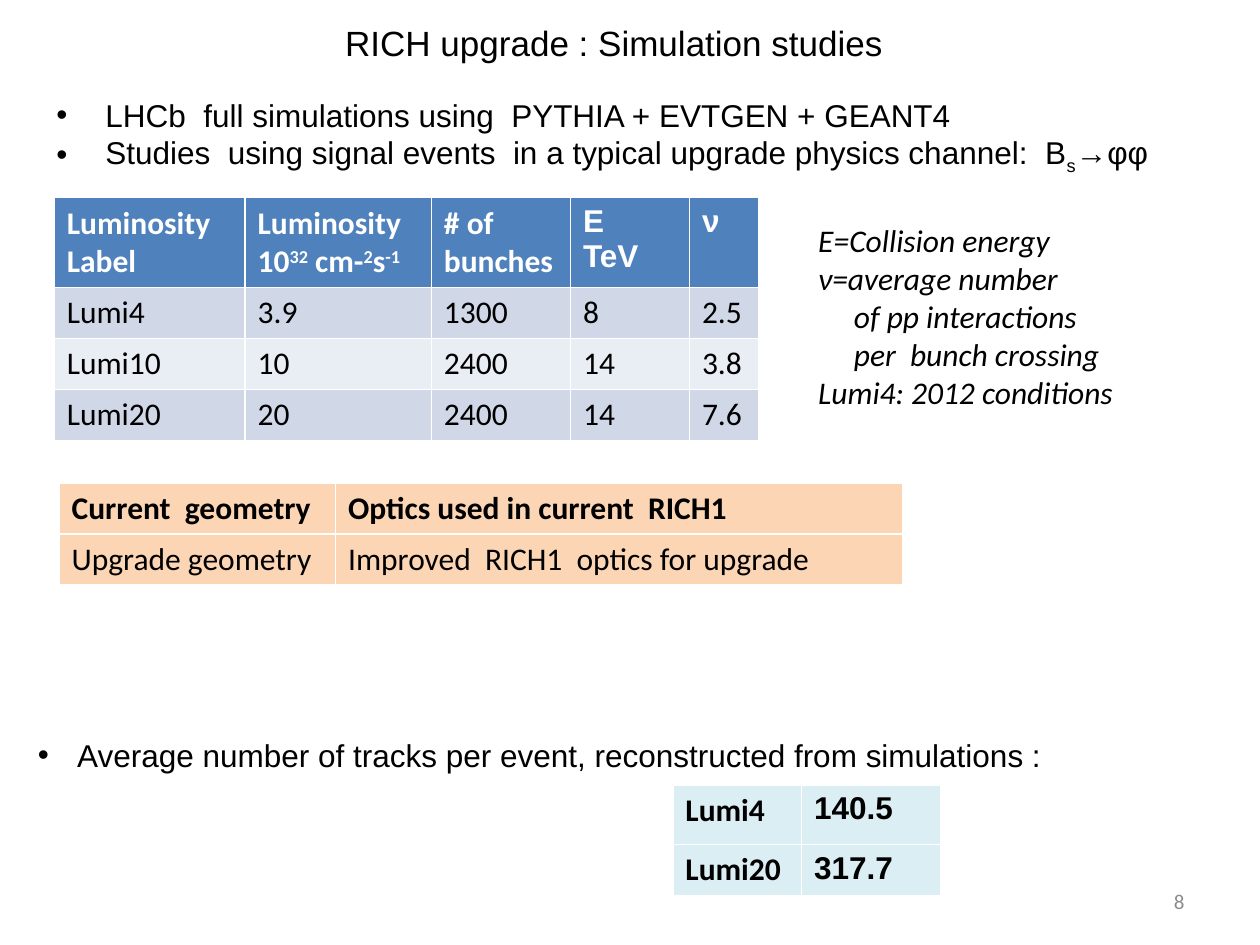
from dataclasses import dataclass

from pptx import Presentation
from pptx.dml.color import RGBColor
from pptx.enum import text
from pptx.util import Pt


@dataclass(frozen=True)
class Theme:
    sans: str = "Arial"
    table: str = "Calibri"
    title_size: int = 20
    body_size: int = 18
    number_size: int = 12
    black: str = "000000"
    white: str = "FFFFFF"
    gray: str = "8C8C8C"
    header: str = "4F81BD"
    bands: tuple = ("D0D8E8", "E9EDF4")
    peach: str = "FCD5B5"
    aqua: str = "DBEEF4"


theme = Theme()


def write(frame, lines, font, size=theme.body_size, color=theme.black,
          bold=False, italic=False, baseline=30000):
    """Fill a text frame; text between two ^ marks is shifted by baseline."""
    for index, line in enumerate(lines):
        para = frame.paragraphs[0] if index == 0 else frame.add_paragraph()
        para.font.name = font
        para.font.size = Pt(size)
        para.font.color.rgb = RGBColor.from_string(color)
        para.font.bold = bold
        para.font.italic = italic
        para.space_before = Pt(0)
        for part, words in enumerate(line.split("^")):
            if words:
                span = para.add_run()
                span.text = words
                if part % 2:
                    span.font._element.set("baseline", str(baseline))


def add_grid(left, top, widths, heights):
    """Add a table with the given column widths and row heights."""
    grid = slide.shapes.add_table(len(heights), len(widths), Pt(left), Pt(top),
                                  Pt(sum(widths)), Pt(sum(heights))).table
    for column, width in zip(grid.columns, widths):
        column.width = Pt(width)
    for row, height in zip(grid.rows, heights):
        row.height = Pt(height)
    return grid


deck = Presentation()
deck.slide_width, deck.slide_height = Pt(720), Pt(540)
slide = deck.slides.add_slide(deck.slide_layouts[3])
title, studies, tracks = slide.placeholders

# Title
title.left, title.top, title.width, title.height = Pt(190), Pt(8.5), Pt(324), Pt(31.5)
frame = title.text_frame
frame.auto_size = text.MSO_AUTO_SIZE.NONE
frame.word_wrap = False
write(frame, ["RICH upgrade : Simulation studies"], theme.sans, theme.title_size)
frame.paragraphs[0].alignment = text.PP_ALIGN.LEFT

# Bulleted lists
lists = [
    (studies, (25, 51, 665, 51), 28,
     ["LHCb  full simulations using  PYTHIA + EVTGEN + GEANT4",
      "Studies  using signal events  in a typical upgrade physics channel:  B^s^→φφ"]),
    (tracks, (14.4, 417, 601, 29), 22.5,
     ["Average number of tracks per event, reconstructed from simulations :"]),
]
for box, (left, top, width, height), indent, lines in lists:
    box.left, box.top, box.width, box.height = Pt(left), Pt(top), Pt(width), Pt(height)
    box.text_frame.auto_size = text.MSO_AUTO_SIZE.NONE
    write(box.text_frame, lines, theme.sans, baseline=-25000)
    for para in box.text_frame.paragraphs:
        properties = para._p.get_or_add_pPr()
        properties.set("marL", str(Pt(indent)))
        properties.set("indent", str(-Pt(indent)))

# Luminosity conditions
headers = [["Luminosity", "Label"], ["Luminosity", "10^32^ cm-^2^s^-1^"],
           ["# of", "bunches"], ["E", "TeV"], ["ν"]]
conditions = [["Lumi4", "3.9", "1300", "8", "2.5"],
              ["Lumi10", "10", "2400", "14", "3.8"],
              ["Lumi20", "20", "2400", "14", "7.6"]]
grid = add_grid(31, 113, [109, 106.5, 79.5, 68, 39.5], [45.4, 29.2, 29.2, 29.2])
for column, lines in enumerate(headers):
    cell = grid.cell(0, column)
    cell.fill.solid()
    cell.fill.fore_color.rgb = RGBColor.from_string(theme.header)
    write(cell.text_frame, lines, theme.sans if column > 2 else theme.table,
          color=theme.white, bold=True)
for row, values in enumerate(conditions):
    for column, value in enumerate(values):
        cell = grid.cell(row + 1, column)
        cell.fill.solid()
        cell.fill.fore_color.rgb = RGBColor.from_string(theme.bands[row % 2])
        write(cell.text_frame, [value], theme.table)

# Two-column tables: geometries and track counts
pairs = [
    ((33.8, 276), [158, 324], [29.2, 29.2], theme.peach, theme.table, (True, False),
     [["Current  geometry", "Optics used in current  RICH1"],
      ["Upgrade geometry", "Improved  RICH1  optics for upgrade"]]),
    ((384.5, 448.5), [73.5, 79.5], [34, 28.8], theme.aqua, theme.sans, (True, True),
     [["Lumi4", "140.5"], ["Lumi20", "317.7"]]),
]
for (left, top), widths, heights, fill, value_font, bolds, rows in pairs:
    grid = add_grid(left, top, widths, heights)
    for row, values in enumerate(rows):
        for column, value in enumerate(values):
            cell = grid.cell(row, column)
            cell.fill.solid()
            cell.fill.fore_color.rgb = RGBColor.from_string(fill)
            write(cell.text_frame, [value], value_font if column else theme.table,
                  bold=bolds[row])

# Legend beside the luminosity table
legend = slide.shapes.add_textbox(Pt(460.5), Pt(123), Pt(185), Pt(116.6)).text_frame
legend.word_wrap = False
write(legend, ["E=Collision energy", "ν=average number", "of pp interactions",
               "per  bunch crossing", "Lumi4: 2012 conditions"],
      theme.table, italic=True)
for para in legend.paragraphs[2:4]:
    para._p.get_or_add_pPr().set("marL", str(Pt(20.4)))

# Page number
number = slide.shapes.add_textbox(Pt(516), Pt(500.5), Pt(168), Pt(28.8)).text_frame
number.word_wrap = True
number.vertical_anchor = text.MSO_ANCHOR.MIDDLE
write(number, ["8"], theme.table, theme.number_size, theme.gray)
number.paragraphs[0].alignment = text.PP_ALIGN.RIGHT

deck.save("out.pptx")
